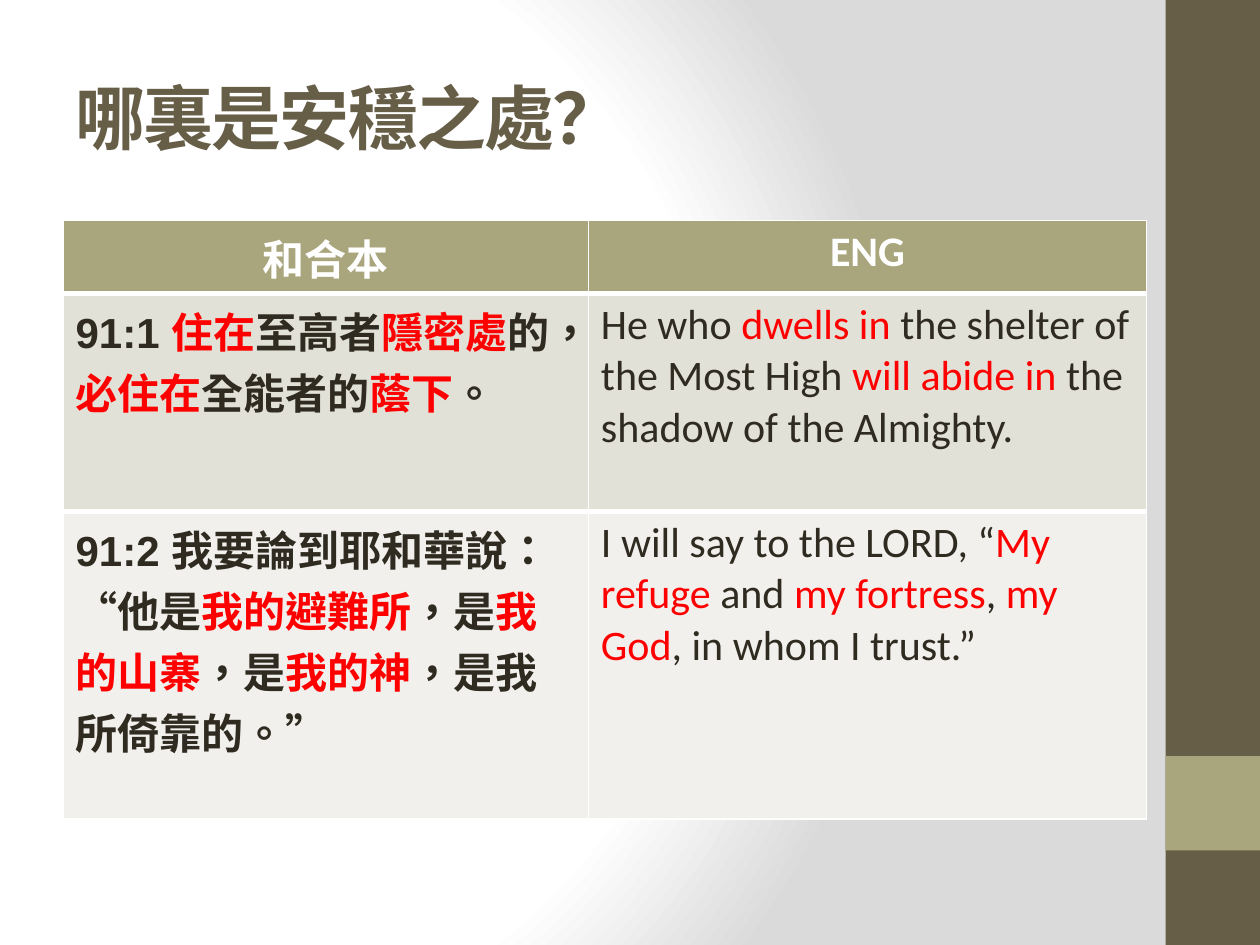
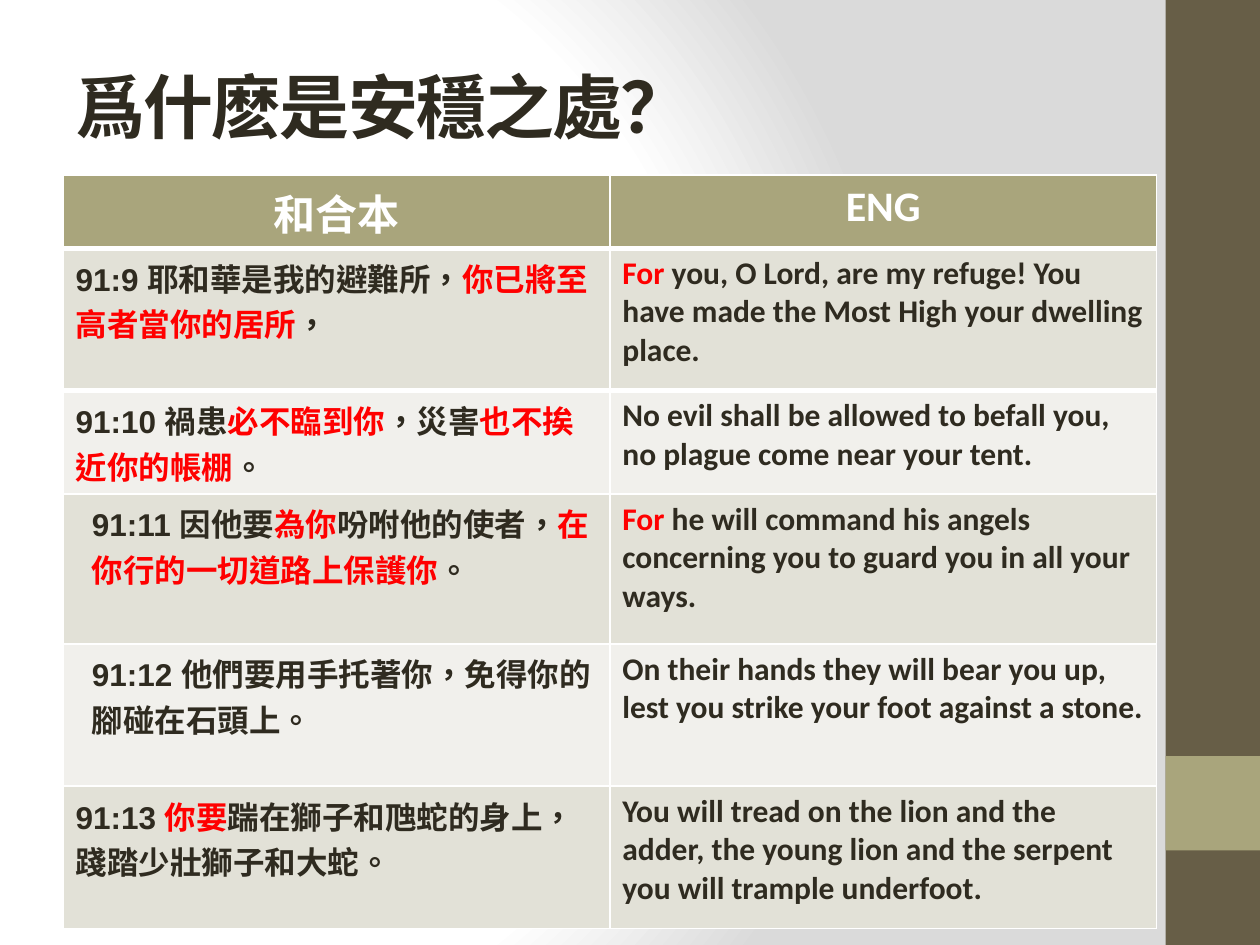
from lxml import etree
from pptx import Presentation
from pptx.dml.color import RGBColor
from pptx.enum import lang, shapes, text
from pptx.oxml import ns
from pptx.util import Inches, Pt

BROWN = RGBColor(0x67, 0x5E, 0x47)
OLIVE = RGBColor(0xA9, 0xA5, 0x7C)
INK = RGBColor(0x2F, 0x2B, 0x20)
RED = RGBColor(0xFF, 0x00, 0x00)
WHITE = RGBColor(0xFF, 0xFF, 0xFF)
ROW_FILLS = [RGBColor(0xE2, 0xE1, 0xD7), RGBColor(0xF1, 0xF0, 0xEC)]
GRADIENT_STOPS = [(0, WHITE), (75, WHITE), (100, RGBColor(0xDA, 0xDA, 0xDA))]
HEADINGS = ["和合本", "ENG"]
COLUMN_FONTS = ["Arial", "Calibri"]
LEFT = 0.5

# Verses: Chinese, English; square brackets mark the red words
REFUGE_VERSES = [
    ("91:1 [住在]至高者[隱密處]的，[必住在]全能者的[蔭下]。",
     "He who [dwells in] the shelter of the Most High [will abide in] "
     "the shadow of the Almighty."),
    ("91:2 我要論到耶和華說：“他是[我的避難所]，是[我的山寨]，是[我的神]，是我所倚靠的。”",
     "I will say to the LORD, “[My refuge] and [my fortress], [my God], "
     "in whom I trust.”"),
]
PROTECTION_VERSES = [
    ("91:9 耶和華是我的避難所，[你已將至高者當你的居所]，",
     "[For] you, O Lord, are my refuge! You have made the Most High "
     "your dwelling place."),
    ("91:10 禍患[必不臨到你]，災害[也不挨近你的帳棚]。",
     "No evil shall be allowed to befall you, no plague come near your tent."),
    ("91:11 因他要[為你]吩咐他的使者，[在你行的一切道路上保護你]。",
     "[For] he will command his angels concerning you to guard you "
     "in all your ways."),
    ("91:12 他們要用手托著你，免得你的腳碰在石頭上。",
     "On their hands they will bear you up, lest you strike your foot "
     "against a stone."),
    ("91:13 [你要]踹在獅子和虺蛇的身上，踐踏少壯獅子和大蛇。",
     "You will tread on the lion and the adder, the young lion and "
     "the serpent you will trample underfoot."),
]
INDENTED_VERSES = ("91:11", "91:12")


def set_background(master):
    """Give every slide the same round gradient."""
    master.background.fill.gradient()
    gradient = master.element.find(".//" + ns.qn("a:gradFill"))
    for child in list(gradient):
        gradient.remove(child)
    stops = etree.SubElement(gradient, ns.qn("a:gsLst"))
    for position, color in GRADIENT_STOPS:
        stop = etree.SubElement(stops, ns.qn("a:gs"), pos=str(position * 1000))
        etree.SubElement(stop, ns.qn("a:srgbClr"), val=str(color))
    circle = etree.SubElement(gradient, ns.qn("a:path"), path="circle")
    etree.SubElement(circle, ns.qn("a:fillToRect"),
                     l="20000", t="50000", r="100000", b="50000")


def add_band(slide, top, height, color):
    band = slide.shapes.add_shape(shapes.MSO_SHAPE.RECTANGLE, Inches(9.25),
                                  Inches(top), Inches(0.75), Inches(height))
    band.shadow.inherit = False
    band.fill.solid()
    band.fill.fore_color.rgb = color
    band.line.fill.background()


def add_title(slide, wording, top, height, color):
    box = slide.shapes.add_textbox(Inches(LEFT), Inches(top),
                                   Inches(8.33), Inches(height))
    frame = box.text_frame
    frame.word_wrap = True
    frame.vertical_anchor = text.MSO_ANCHOR.MIDDLE
    run = frame.paragraphs[0].add_run()
    run.text = wording
    style_font(run.font, "Cambria", 40, True, color)
    run.font.language_id = lang.MSO_LANGUAGE_ID.SIMPLIFIED_CHINESE
    run.font._element.set("spc", "-100")


def style_font(font, name, size, bold, color):
    font.name = name
    font.size = Pt(size)
    font.bold = bold
    font.color.rgb = color


def fill_cell(cell, wording, color, font_name, size, bold, fill):
    """Write the wording, with its bracketed parts in red."""
    cell.fill.solid()
    cell.fill.fore_color.rgb = fill
    paragraph = cell.text_frame.paragraphs[0]
    for index, part in enumerate(wording.replace("]", "[").split("[")):
        if part:
            run = paragraph.add_run()
            run.text = part
            style_font(run.font, font_name, size, bold, RED if index % 2 else color)
            run.font.language_id = lang.MSO_LANGUAGE_ID.TRADITIONAL_CHINESE
    return paragraph


def set_border(cell, side, width):
    """Draw a white line on one side of a cell, below its fill in the XML."""
    properties = cell._tc.get_or_add_tcPr()
    line = etree.Element(ns.qn("a:" + side), w=str(Pt(width)))
    fill = etree.SubElement(line, ns.qn("a:solidFill"))
    etree.SubElement(fill, ns.qn("a:srgbClr"), val=str(WHITE))
    properties.insert(0, line)


def add_verse_table(slide, verses, top, widths, heights, size, english_bold):
    table = slide.shapes.add_table(len(verses) + 1, 2, Inches(LEFT), Inches(top),
                                   Inches(sum(widths)), Inches(sum(heights))).table
    for column, width in zip(table.columns, widths):
        column.width = Inches(width)
    for row, height in zip(table.rows, heights):
        row.height = Inches(height)

    for column, heading in enumerate(HEADINGS):
        paragraph = fill_cell(table.cell(0, column), heading, WHITE,
                              "Calibri", 24, True, OLIVE)
        paragraph.alignment = text.PP_ALIGN.CENTER
        set_border(table.cell(0, column), "lnB", 3)
        set_border(table.cell(1, column), "lnT", 3)

    for row, verse in enumerate(verses, 1):
        for column, wording in enumerate(verse):
            paragraph = fill_cell(table.cell(row, column), wording, INK,
                                  COLUMN_FONTS[column], size,
                                  column == 0 or english_bold,
                                  ROW_FILLS[(row - 1) % 2])
            if wording.startswith(INDENTED_VERSES):
                properties = paragraph._p.get_or_add_pPr()
                properties.set("marL", str(Inches(0.13)))
                properties.set("indent", "0")


def add_slide(presentation):
    slide = presentation.slides.add_slide(presentation.slide_layouts[6])
    add_band(slide, 0, 7.5, BROWN)
    add_band(slide, 6, 0.75, OLIVE)
    return slide


def main():
    presentation = Presentation()
    presentation.slide_width = Inches(10)
    presentation.slide_height = Inches(7.5)
    set_background(presentation.slide_master)

    # Where the refuge is
    slide = add_slide(presentation)
    add_title(slide, "哪裏是安穩之處？", 0.3, 1.25, BROWN)
    add_verse_table(slide, REFUGE_VERSES, 1.75, [4.17, 4.43],
                    [0.58, 1.73, 2.44], 24, False)

    # Why it is a refuge
    slide = add_slide(presentation)
    add_title(slide, "爲什麽是安穩之處？", 0.44, 0.79, INK)
    add_verse_table(slide, PROTECTION_VERSES, 1.39, [4.34, 4.34],
                    [0.58, 1.13, 0.82, 1.19, 1.13, 1.13], 18, True)

    presentation.save("out.pptx")


if __name__ == "__main__":
    main()
